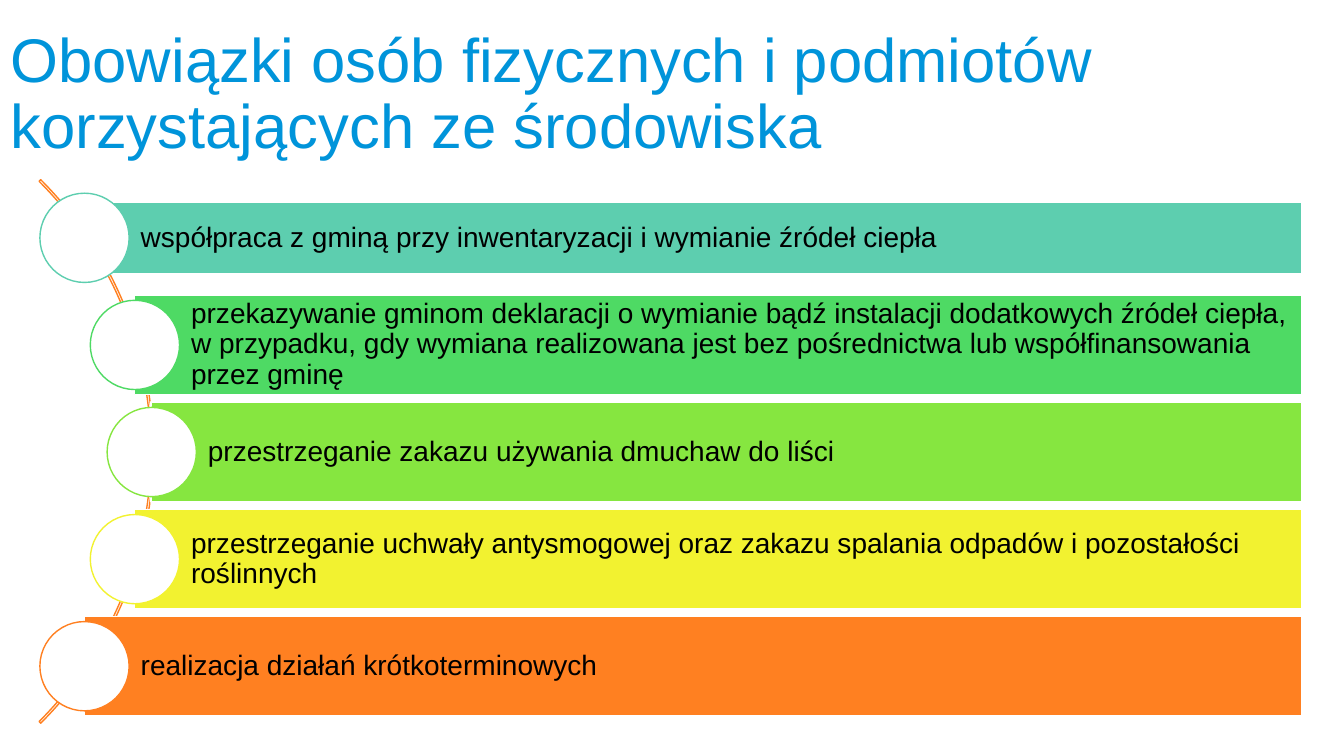
from pptx import Presentation, util as u
from pptx.dml.color import RGBColor
from pptx.enum import shapes, text

PX = 9525  # EMU per px, 96 px to the inch
CIRCLE = 85
PITCH = 102
FIRST_CENTRE = 227
BAR_RIGHT = 1240

# circle left, bar height, colour, wording
DUTIES = [
    (38, 68, "5DCEAF", "współpraca z gminą przy inwentaryzacji i wymianie źródeł ciepła"),
    (86, 95, "4EDA64", "przekazywanie gminom deklaracji o wymianie bądź instalacji "
     "dodatkowych źródeł ciepła, w przypadku, gdy wymiana realizowana jest bez "
     "pośrednictwa lub współfinansowania przez gminę"),
    (102, 95, "86E640", "przestrzeganie zakazu używania dmuchaw do liści"),
    (86, 95, "F2F230", "przestrzeganie uchwały antysmogowej oraz zakazu spalania "
     "odpadów i pozostałości roślinnych"),
    (38, 95, "FF8021", "realizacja działań krótkoterminowych"),
]


def px(n):
    return u.Emu(n * PX)


def rgb(value):
    return RGBColor.from_string(value)


def write(sp, words, size, color, insets):
    tf = sp.text_frame
    tf.word_wrap = True
    tf.auto_size = text.MSO_AUTO_SIZE.NONE
    tf.vertical_anchor = text.MSO_ANCHOR.MIDDLE
    tf.margin_left, tf.margin_top, tf.margin_right, tf.margin_bottom = map(px, insets)
    p = tf.paragraphs[0]
    p.alignment = text.PP_ALIGN.LEFT
    p.line_spacing = 0.9
    r = p.add_run()
    r.text = words
    r.font.name = "Arial"
    r.font.size = u.Pt(size)
    r.font.color.rgb = rgb(color)


def add_shape(s, kind, x, y, w, h, line, fill=None):
    sp = s.shapes.add_shape(kind, px(x), px(y), px(w), px(h))
    sp.shadow.inherit = False
    if fill:
        sp.fill.solid()
        sp.fill.fore_color.rgb = rgb(fill)
    else:
        sp.fill.background()
    sp.line.color.rgb = rgb(line)
    sp.line.width = u.Pt(1)
    return sp


def add_title(s, words):
    sp = s.shapes.title
    sp.left, sp.top, sp.width, sp.height = px(0), px(24), px(1060), px(129)
    # No right inset, so that the first line keeps its last word
    write(sp, words, size=44, color="0094DA", insets=(10, 5, 0, 0))


def add_arc(s):
    sp = add_shape(s, shapes.MSO_SHAPE.BLOCK_ARC, -586, 64, 732, 732, line="FF8021")
    for i, value in enumerate((189, 27, 0.003)):
        sp.adjustments[i] = value


def add_duty(s, centre, left, height, color, words):
    bar_left = left + CIRCLE // 2
    bar = add_shape(s, shapes.MSO_SHAPE.RECTANGLE, bar_left, centre - (height + 1) // 2,
                    BAR_RIGHT - bar_left, height, line="FFFFFF", fill=color)
    write(bar, words, size=20, color="000000", insets=(54, 6, 6, 6))
    add_shape(s, shapes.MSO_SHAPE.OVAL, left, centre - (CIRCLE + 1) // 2, CIRCLE, CIRCLE,
              line=color, fill="FFFFFF")


def main():
    prs = Presentation()
    prs.slide_width, prs.slide_height = px(1280), px(720)
    s = prs.slides.add_slide(prs.slide_layouts[5])
    add_title(s, "Obowiązki osób fizycznych i podmiotów korzystających ze środowiska")
    # Arc behind, then one bar and circle per duty
    add_arc(s)
    for i, duty in enumerate(DUTIES):
        add_duty(s, FIRST_CENTRE + i * PITCH, *duty)
    prs.save("out.pptx")


if __name__ == "__main__":
    main()
